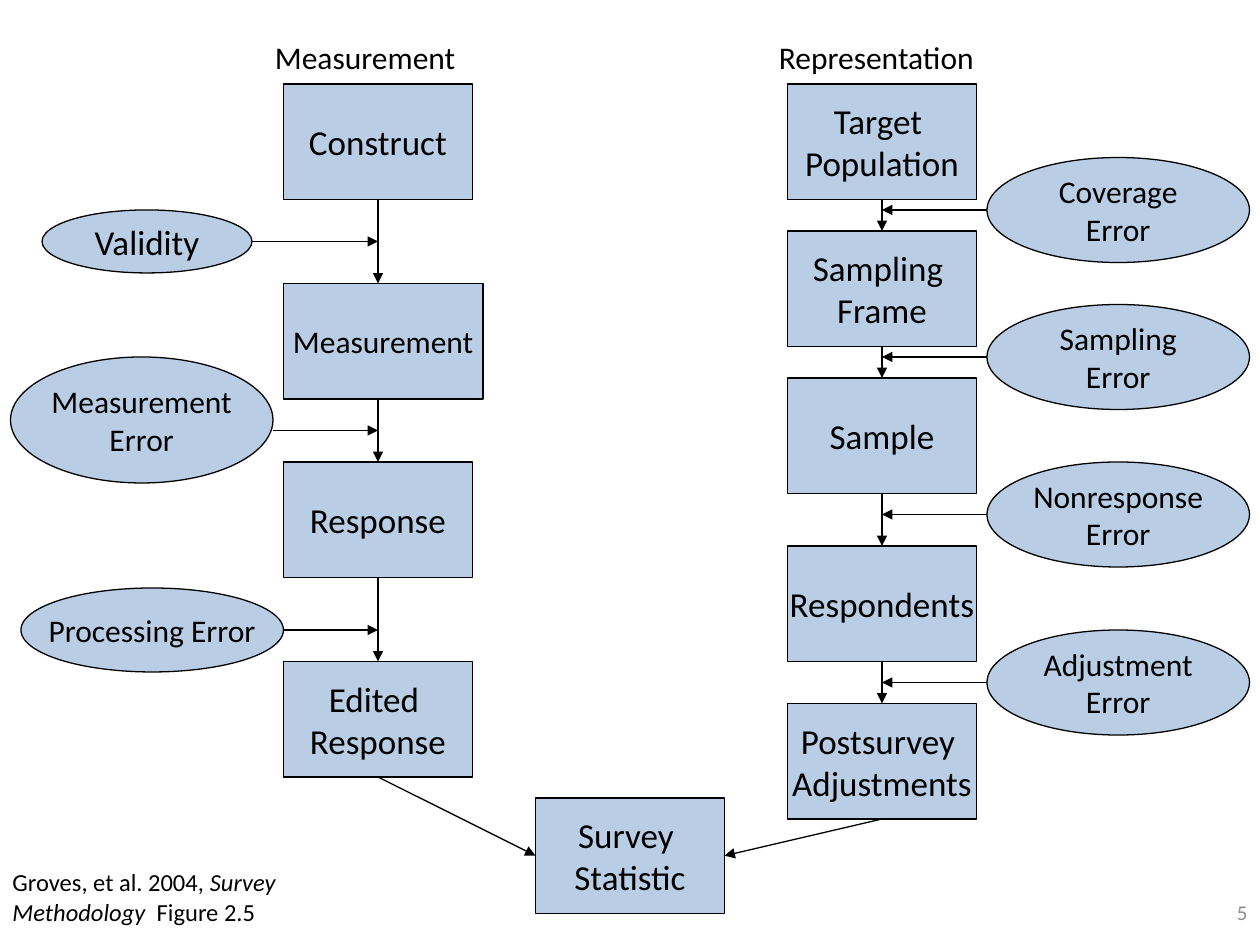
from dataclasses import dataclass

from lxml import etree
from pptx import Presentation
from pptx.dml.color import RGBColor
from pptx.enum.shapes import MSO_CONNECTOR, MSO_SHAPE
from pptx.enum.text import MSO_ANCHOR, PP_ALIGN
from pptx.oxml.ns import qn
from pptx.util import Pt

RECT, OVAL = MSO_SHAPE.RECTANGLE, MSO_SHAPE.OVAL
STRAIGHT = MSO_CONNECTOR.STRAIGHT
MIDDLE, TOP = MSO_ANCHOR.MIDDLE, MSO_ANCHOR.TOP
LEFT, CENTER, RIGHT = PP_ALIGN.LEFT, PP_ALIGN.CENTER, PP_ALIGN.RIGHT
TOP_SITE, LEFT_SITE, BOTTOM_SITE, RIGHT_SITE = 0, 1, 2, 3


@dataclass(frozen=True)
class Theme:
    font: str = "Calibri"
    fill: RGBColor = RGBColor(0xB9, 0xCD, 0xE5)
    ink: RGBColor = RGBColor(0, 0, 0)
    gray: RGBColor = RGBColor(0x8C, 0x8C, 0x8C)
    large: int = 20
    medium: int = 18
    small: int = 14
    tiny: int = 12
    line: float = 0.75


THEME = Theme()
STEP_W, STEP_H = 108, 66


def style(par, size, color=THEME.ink, align=LEFT):
    par.alignment = align
    par.font.name = THEME.font
    par.font.size = Pt(size)
    par.font.color.rgb = color


def node(slide, kind, box, text, size, wrap=False, inset=7.2):
    shape = slide.shapes.add_shape(kind, *map(Pt, box))
    shape.shadow.inherit = False
    shape.fill.solid()
    shape.fill.fore_color.rgb = THEME.fill
    shape.line.color.rgb = THEME.ink
    shape.line.width = Pt(THEME.line)
    frame = shape.text_frame
    frame.word_wrap = wrap
    frame.vertical_anchor = MIDDLE
    frame.margin_left = frame.margin_right = Pt(inset)
    frame.text = text
    for par in frame.paragraphs:
        style(par, size, align=CENTER)
    return shape


def arrow(slide, start, end, source=None, target=None):
    """Draw an arrow; source and target are optional (shape, site) joins."""
    line = slide.shapes.add_connector(STRAIGHT, *map(Pt, start + end))
    if source:
        line.begin_connect(*source)
    if target:
        line.end_connect(*target)
    line.line.color.rgb = THEME.ink
    line.line.width = Pt(THEME.line)
    etree.SubElement(line.line._get_or_add_ln(), qn("a:tailEnd"), type="triangle")
    etree.SubElement(line._element.spPr, qn("a:effectLst"))


def label(slide, box, runs, size, color=THEME.ink, align=LEFT, anchor=TOP):
    """Place one paragraph made of (text, italic) runs."""
    frame = slide.shapes.add_textbox(*map(Pt, box)).text_frame
    frame.word_wrap = True
    frame.vertical_anchor = anchor
    par = frame.paragraphs[0]
    style(par, size, color, align)
    for text, italic in runs:
        run = par.add_run()
        run.text = text
        if italic:
            run.font.italic = True


def chain(slide, box, title, steps):
    """Stack (offset, text, size, width) steps under a title; return the last."""
    x, y, width = box
    label(slide, (x - 12, y - 30, width, 28.8), [(title, False)], THEME.medium)
    mid = x + STEP_W / 2
    last = None
    for drop, text, size, wide in steps:
        top = y + drop
        step = node(slide, RECT, (x, top, wide, STEP_H), text, size)
        centred = wide == STEP_W
        if last:
            arrow(slide, (mid, end), (mid, top),
                  (last, BOTTOM_SITE) if joined else None,
                  (step, TOP_SITE) if centred else None)
        last, end, joined = step, top + STEP_H, centred
    return last


def source(slide, box, axis, text, size, drop, wrap=False, inset=7.2):
    """Place an error oval with an arrow, drop below its top, to the axis."""
    x, y, width, height = box
    node(slide, OVAL, box, text, size, wrap, inset)
    edge = x + width if x < axis else x
    arrow(slide, (edge, y + drop), (axis, y + drop))


def result(slide, box, left, right):
    x, y, width, height = box
    stat = node(slide, RECT, box, "Survey \nStatistic", THEME.large)
    mid = y + height / 2
    arrow(slide, (x - 90, mid), (x, mid), (left, BOTTOM_SITE), (stat, LEFT_SITE))
    arrow(slide, (x + width + 90, mid), (x + width, mid),
          (right, BOTTOM_SITE), (stat, RIGHT_SITE))


def footer(slide, box):
    x, y, width, height = box
    label(slide, (x, y, 234, 41),
          [("Groves, et al. 2004, ", False), ("Survey Methodology ", True),
           (" Figure 2.5", False)], THEME.small)
    label(slide, (x + width - 168, y + 10.5, 168, height - 10.5),
          [("5", False)], THEME.tiny, THEME.gray, RIGHT, MIDDLE)


def main():
    deck = Presentation()
    deck.slide_width, deck.slide_height = Pt(720), Pt(540)
    slide = deck.slides.add_slide(deck.slide_layouts[6])
    big, mid = THEME.large, THEME.medium

    left = chain(slide, (162, 48, 126), "Measurement", [
        (0, "Construct", big, STEP_W),
        (114, "Measurement", mid, STEP_W + 6),
        (216, "Response", big, STEP_W),
        (330, "Edited \nResponse", big, STEP_W),
    ])
    right = chain(slide, (450, 48, 144), "Representation", [
        (drop, text, big, STEP_W) for drop, text in (
            (0, "Target \nPopulation"), (84, "Sampling \nFrame"),
            (168, "Sample"), (264, "Respondents"),
            (354, "Postsurvey \nAdjustments"))
    ])
    result(slide, (306, 456, STEP_W, STEP_H), left, right)

    source(slide, (24, 120, 120, 36), 216, "Validity", big, 18)
    source(slide, (6, 204, 150, 72), 216, "Measurement Error", mid, 42, True, 0)
    source(slide, (12, 336, 150, 48), 216, "Processing Error", mid, 24)
    for y, name in ((90, "Coverage"), (174, "Sampling"),
                    (264, "Nonresponse"), (360, "Adjustment")):
        source(slide, (564, y, 150, 60), 504, f"{name} Error", mid, 30, True, 3.6)

    footer(slide, (0, 492, 720, 48))
    deck.save("out.pptx")


if __name__ == "__main__":
    main()
